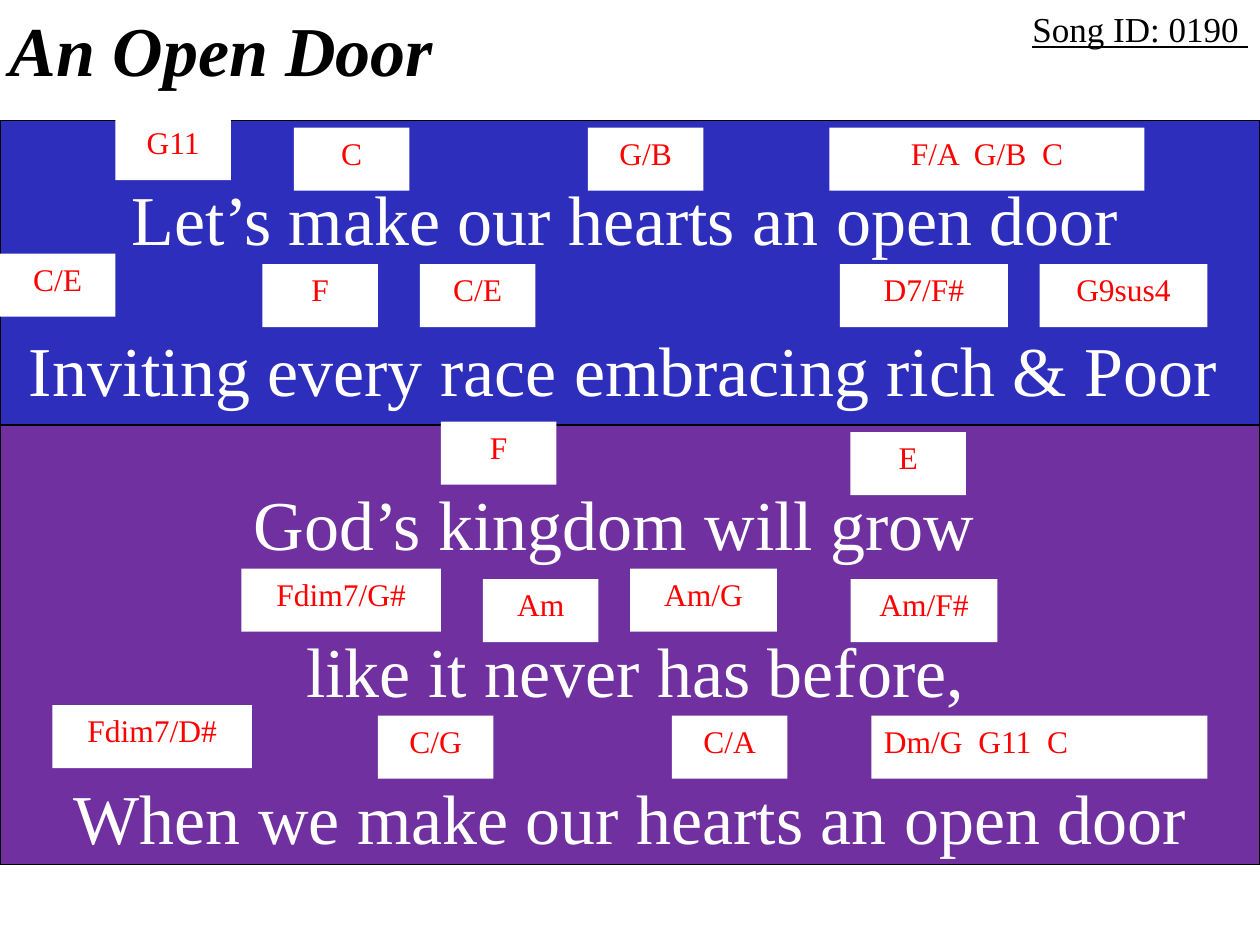
from dataclasses import dataclass

import pptx
import pptx.dml.color
import pptx.enum.shapes
import pptx.enum.text
import pptx.util

Pt = pptx.util.Pt
ALIGN = pptx.enum.text.PP_ALIGN


@dataclass(frozen=True)
class Theme:
    font: str = "Times New Roman"
    paper: str = "FFFFFF"
    ink: str = "000000"
    chord: str = "FF0000"
    verse_panel: str = "2E2EBC"
    refrain_panel: str = "7030A0"
    lyric_size: int = 40
    id_size: int = 20
    chord_size: int = 18
    space_before: float = 0.1  # share of the type size


def rgb(value):
    return pptx.dml.color.RGBColor.from_string(value)


def write_text(shape, text, *, theme, size, color, align=ALIGN.LEFT,
               bold=False, italic=False, underline=False):
    frame = shape.text_frame
    frame.word_wrap = True
    frame.auto_size = pptx.enum.text.MSO_AUTO_SIZE.NONE
    frame.vertical_anchor = pptx.enum.text.MSO_ANCHOR.TOP
    paragraph = frame.paragraphs[0]
    paragraph.alignment = align
    paragraph.space_before = Pt(size * theme.space_before)
    run = paragraph.add_run()
    run.text = text
    font = run.font
    font.name, font.size = theme.font, Pt(size)
    font.bold, font.italic, font.underline = bold, italic, underline
    font.color.rgb = rgb(color)


class SongSlide:
    def __init__(self, slide, theme):
        self.slide = slide
        self.theme = theme

    def box(self, left, top, width, height, fill, outline=None):
        shape = self.slide.shapes.add_shape(
            pptx.enum.shapes.MSO_SHAPE.RECTANGLE,
            Pt(left), Pt(top), Pt(width), Pt(height))
        shape.shadow.inherit = False
        shape.fill.solid()
        shape.fill.fore_color.rgb = rgb(fill)
        if outline:
            shape.line.color.rgb = rgb(outline)
            shape.line.width = Pt(0.75)
        else:
            shape.line.fill.background()
        return shape

    def heading(self, text, left, top, width, height, size, **text_format):
        shape = self.box(left, top, width, height, self.theme.paper)
        write_text(shape, text, theme=self.theme, size=size,
                   color=self.theme.ink, **text_format)

    def panel(self, top, height, fill):
        self.box(0, top, 720, height, fill, self.theme.ink)

    def lyric(self, text, left, top, width):
        shape = self.slide.shapes.add_textbox(
            Pt(left), Pt(top), Pt(width), Pt(55.5))
        write_text(shape, text, theme=self.theme, size=self.theme.lyric_size,
                   color=self.theme.paper, align=ALIGN.CENTER)

    def chord(self, text, left, top, width, align=ALIGN.CENTER):
        shape = self.box(left, top, width, 36, self.theme.paper)
        write_text(shape, text, theme=self.theme, size=self.theme.chord_size,
                   color=self.theme.chord, align=align)


SHORT, MEDIUM, WIDE, LONG = 66, 84, 96, 114
RAISE = 6  # raised chords sit this much above their row

# Row top: (chord, left, width, raised)
CHORD_ROWS = {
    73: [("G11", 66, SHORT, True), ("C", 168, SHORT, False),
         ("G/B", 336, SHORT, False), ("F/A  G/B  C", 474, 180, False)],
    151: [("C/E", 0, SHORT, True), ("F", 150, SHORT, False),
          ("C/E", 240, SHORT, False), ("D7/F#", 480, WIDE, False),
          ("G9sus4", 594, WIDE, False)],
    247: [("F", 252, SHORT, True), ("E", 486, SHORT, False)],
    331: [("Fdim7/G#", 138, LONG, True), ("Am", 276, SHORT, False),
          ("Am/G", 360, MEDIUM, True), ("Am/F#", 486, MEDIUM, False)],
    409: [("Fdim7/D#", 30, LONG, True), ("C/G", 216, SHORT, False),
          ("C/A", 384, SHORT, False)],
}


def main():
    deck = pptx.Presentation()
    deck.slide_width, deck.slide_height = Pt(720), Pt(540)
    theme = Theme()
    song = SongSlide(deck.slides.add_slide(deck.slide_layouts[6]), theme)

    song.heading("An Open Door", -1.5, 0, 548, 55.5, theme.lyric_size,
                 bold=True, italic=True)
    song.heading("Song ID: 0190 ", 433, 1, 287, 31.5, theme.id_size,
                 align=ALIGN.RIGHT, underline=True)
    song.panel(239, 255, theme.refrain_panel)
    song.panel(69, 174, theme.verse_panel)

    song.lyric("Let’s make our hearts an open door", 42, 97, 630)
    song.lyric("God’s kingdom will grow", 84, 271, 534)
    song.lyric("like it never has before,", 114, 355, 498)
    song.lyric("When we make our hearts an open door", 0, 439, 720)

    for row_top, chords in CHORD_ROWS.items():
        for name, left, width, raised in chords:
            song.chord(name, left, row_top - RAISE * raised, width)
    song.chord("Dm/G  G11  C", 498, 409, 192, align=ALIGN.LEFT)

    song.lyric("Inviting every race embracing rich & Poor", -4, 183, 720)

    deck.save("out.pptx")


if __name__ == "__main__":
    main()
